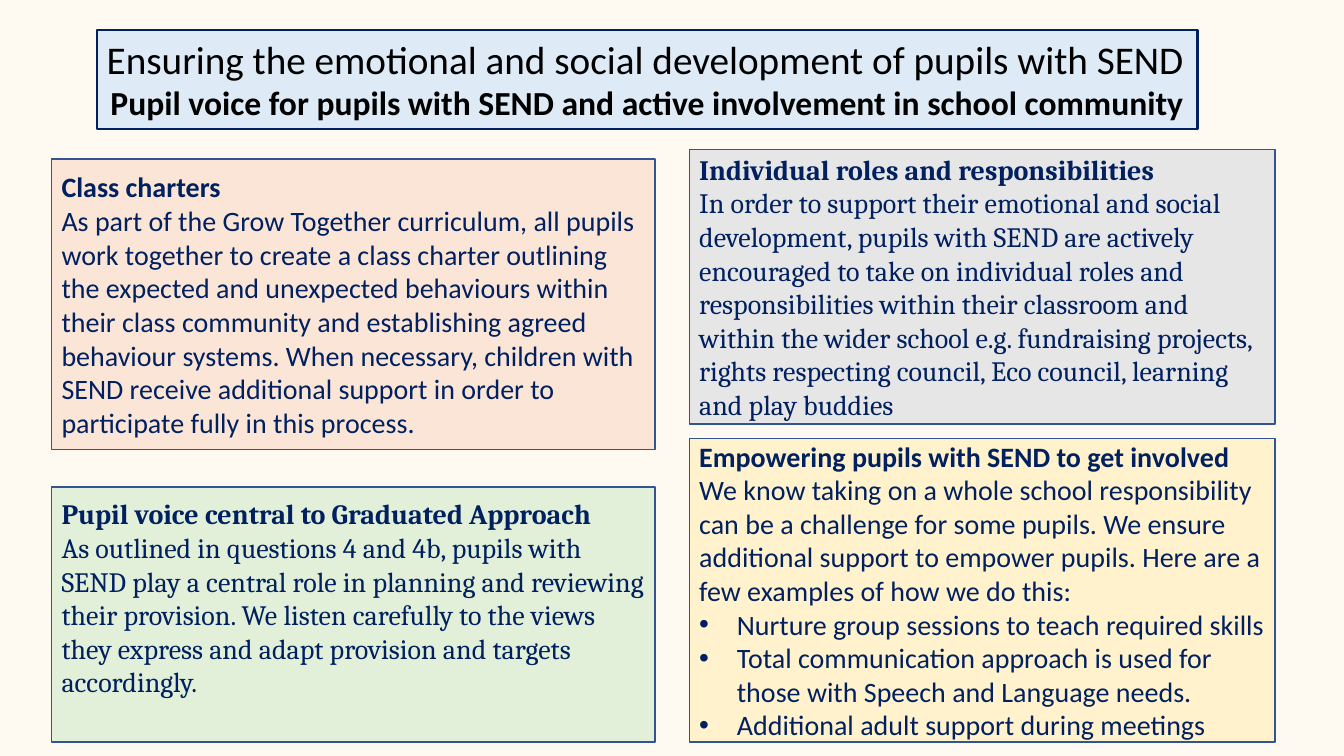
from dataclasses import dataclass

from lxml import etree
from pptx import Presentation
from pptx.dml.color import RGBColor
from pptx.enum.text import MSO_ANCHOR, MSO_AUTO_SIZE, PP_ALIGN
from pptx.oxml.ns import qn
from pptx.util import Cm, Pt

TOP = MSO_ANCHOR.TOP
MIDDLE = MSO_ANCHOR.MIDDLE
FIXED = MSO_AUTO_SIZE.NONE
LEFT = PP_ALIGN.LEFT
CENTER = PP_ALIGN.CENTER
COMPARE = 4


@dataclass(frozen=True)
class Theme:
    page: str = "FFFAF1"
    ink: str = "002060"
    black: str = "000000"
    edge: str = "325491"
    blue: str = "DEEBF7"
    peach: str = "FBE5D6"
    green: str = "E2F0D9"
    grey: str = "E7E6E6"
    cream: str = "FFF2CC"
    sans: str = "Calibri"
    serif: str = "Cambria"
    head: int = 28
    sub: int = 24
    text: int = 20


THEME = Theme()
LEFT_X, LEFT_W = 1.3, 15.21
RIGHT_X, RIGHT_W = 17.37, 14.76

CARDS = [
    dict(
        slot=1, box=(LEFT_X, 4.01, LEFT_W, 7.32), fill=THEME.peach, font=THEME.sans,
        head="Class charters",
        text="As part of the Grow Together curriculum, all pupils work together to create "
             "a class charter outlining the expected and unexpected behaviours within their "
             "class community and establishing agreed behaviour systems. When necessary, "
             "children with SEND receive additional support in order to participate fully "
             "in this process.",
    ),
    dict(
        slot=2, box=(LEFT_X, 12.27, LEFT_W, 6.43), fill=THEME.green, font=THEME.serif,
        head="Pupil voice central to Graduated Approach",
        text="As outlined in questions 4 and 4b, pupils with SEND play a central role in "
             "planning and reviewing their provision. We listen carefully to the views they "
             "express and adapt provision and targets accordingly.",
        foot=0.85,
    ),
    dict(
        slot=3, box=(RIGHT_X, 3.76, RIGHT_W, 6.93), fill=THEME.grey, font=THEME.serif,
        head="Individual roles and responsibilities",
        text="In order to support their emotional and social development, pupils with SEND "
             "are actively encouraged to take on individual roles and responsibilities "
             "within their classroom and within the wider school e.g. fundraising projects, "
             "rights respecting council, Eco council, learning and play buddies",
    ),
    dict(
        slot=4, box=(RIGHT_X, 11.05, RIGHT_W, 7.65), fill=THEME.cream, font=THEME.sans,
        head="Empowering pupils with SEND to get involved",
        text="We know taking on a whole school responsibility can be a challenge for some "
             "pupils. We ensure additional support to empower pupils. Here are a few "
             "examples of how we do this:",
        items=(
            "Nurture group sessions to teach required skills",
            "Total communication approach is used for those with Speech and Language needs.",
            "Additional adult support during meetings",
        ),
    ),
]


def apply(target, values):
    for name, value in values.items():
        setattr(target, name, value)


def paint(fill, color):
    fill.solid()
    fill.fore_color.rgb = RGBColor.from_string(color)


def frame(shape, box, fill, edge, width, anchor, pad, foot):
    left, top, wide, high = map(Cm, box)
    apply(shape, dict(left=left, top=top, width=wide, height=high))
    paint(shape.fill, fill)
    paint(shape.line.fill, edge)
    shape.line.width = Pt(width)
    apply(shape.text_frame, dict(
        word_wrap=True, auto_size=FIXED, vertical_anchor=anchor,
        margin_left=Cm(0.25), margin_right=Cm(0.25),
        margin_top=Cm(pad), margin_bottom=Cm(foot),
    ))


def mark(para, bullet):
    indent = Cm(0.95) if bullet else 0
    props = para._p.get_or_add_pPr()
    props.set("marL", str(indent))
    props.set("indent", str(-indent))
    if bullet:
        etree.SubElement(props, qn("a:buFont"), typeface="Arial")
        etree.SubElement(props, qn("a:buChar"), char="•")
    else:
        etree.SubElement(props, qn("a:buNone"))


def write(para, text, font, size, color, bold=False, align=LEFT, bullet=False):
    apply(para, dict(alignment=align, space_before=Pt(0), space_after=Pt(0), line_spacing=1.0))
    mark(para, bullet)
    run = para.add_run()
    run.text = text
    apply(run.font, dict(name=font, size=Pt(size), bold=bold))
    run.font.color.rgb = RGBColor.from_string(color)


def title(slide):
    shape = slide.shapes.title
    frame(shape, (2.44, 0.76, 27.74, 2.49), THEME.blue, THEME.ink, 1.75, TOP, 0.13, 0.13)
    body = shape.text_frame
    write(body.paragraphs[0], "Ensuring the emotional and social development of pupils with SEND",
          THEME.sans, THEME.head, THEME.black)
    write(body.add_paragraph(),
          "Pupil voice for pupils with SEND and active involvement in school community",
          THEME.sans, THEME.sub, THEME.black, bold=True, align=CENTER)


def card(slide, slot, box, fill, font, head, text, items=(), foot=0):
    shape = slide.placeholders[slot]
    frame(shape, box, fill, THEME.edge, 1, MIDDLE, 0, foot)
    body = shape.text_frame
    style = dict(font=font, size=THEME.text, color=THEME.ink)
    write(body.paragraphs[0], head, bold=True, **style)
    write(body.add_paragraph(), text, **style)
    for item in items:
        write(body.add_paragraph(), item, bullet=True, **style)


def main():
    deck = Presentation()
    apply(deck, dict(slide_width=Cm(33.87), slide_height=Cm(19.05)))
    slide = deck.slides.add_slide(deck.slide_layouts[COMPARE])
    paint(slide.background.fill, THEME.page)
    title(slide)
    for values in CARDS:
        card(slide, **values)
    deck.save("out.pptx")


if __name__ == "__main__":
    main()
